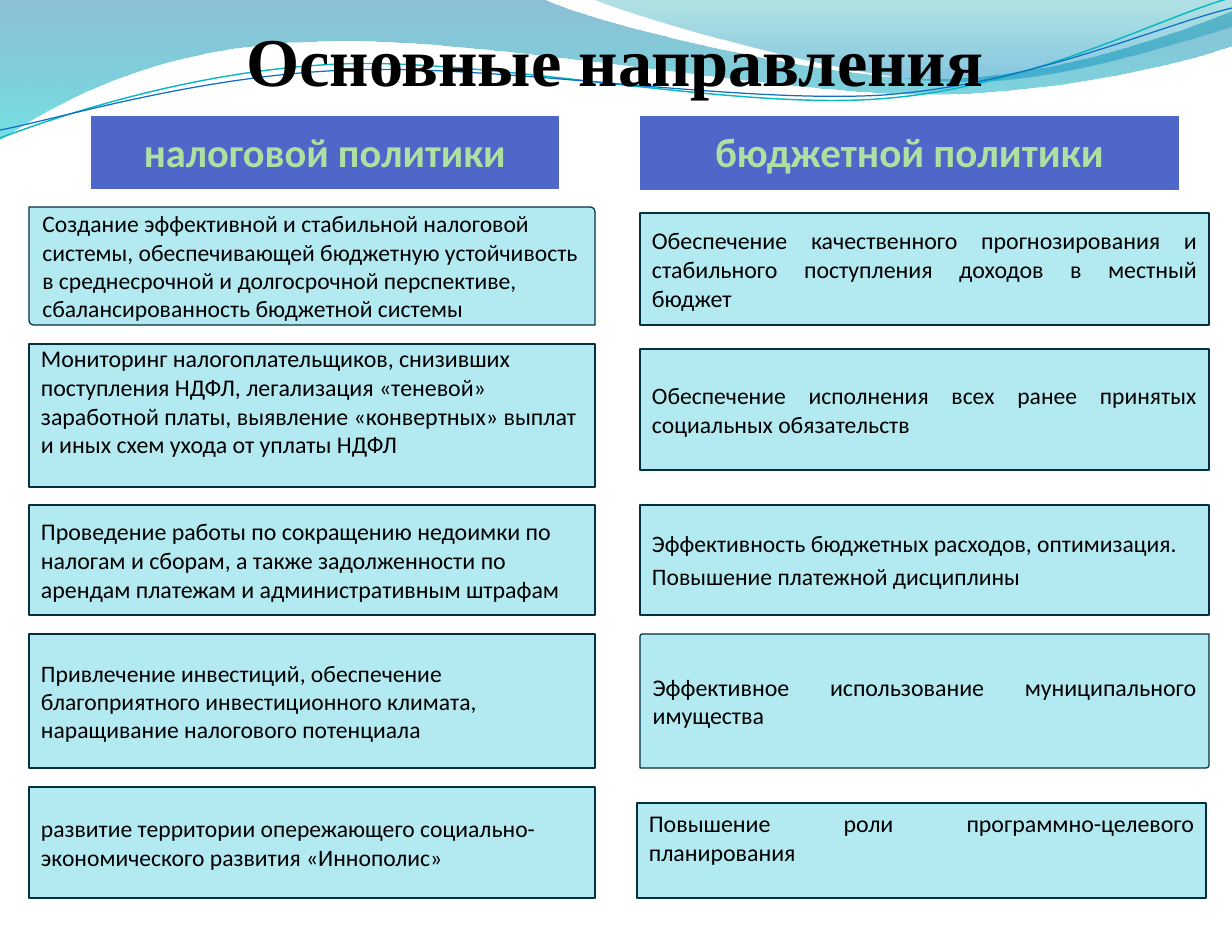
"""Slide on the main directions of tax and budget policy."""
from lxml.etree import SubElement
from pptx import Presentation
from pptx.dml.color import RGBColor
from pptx.enum.shapes import MSO_SHAPE
from pptx.enum.text import MSO_ANCHOR, PP_ALIGN
from pptx.oxml.ns import qn
from pptx.util import Pt

PX = 7538
COLORS = {
    "black": "000000", "card": "B3EAF2", "border": "02303E",
    "header": "4E67C8", "header_text": "B0DFA1",
    "deep": "0074A1", "aqua": "00C6CF", "teal": "00A1A9", "sky": "008BBF",
    "teal_line": "0AB8BF", "blue_line": "0F6FC6",
}


def rgb(name):
    return RGBColor.from_string(COLORS[name])


def write(shape, lines, size, align, color="black", font="Calibri", bold=False, **frame):
    tf = shape.text_frame
    settings = {"word_wrap": True, "vertical_anchor": MSO_ANCHOR.MIDDLE,
                "margin_left": 12 * PX, "margin_right": 12 * PX,
                "margin_top": 6 * PX, "margin_bottom": 6 * PX}
    for key, value in {**settings, **frame}.items():
        setattr(tf, key, value)
    for i, line in enumerate(lines):
        p = tf.paragraphs[0] if i == 0 else tf.add_paragraph()
        p.alignment = align
        p.space_before = Pt(round(size * 0.2, 1))
        r = p.add_run()
        r.text = line
        for key, value in {"size": Pt(size), "name": font, "bold": bold}.items():
            setattr(r.font, key, value)
        r.font.color.rgb = rgb(color)


prs = Presentation()
prs.slide_width, prs.slide_height = 1232 * PX, 936 * PX
s = prs.slides.add_slide(prs.slide_layouts[5])

waves = [
    ([[(0, 0)], [(542, -1)], [(586, 21), (818, 79), (934, 79)],
      [(1052, 79), (1181, 32), (1232, 11)], [(1234, 45)],
      [(1212, 55), (1072, 95), (919, 95)], [(767, 93), (471, 35), (317, 42)],
      [(159, 45), (57, 103), (-1, 141)]],
     [("deep", 45, 0), ("aqua", 55, 1)], None),
    ([[(591, -1)], [(628, 15), (841, 78), (947, 81)],
      [(1054, 86), (1185, 40), (1232, 27)], [(1232, 0)]],
     [("teal", 30, 0), ("sky", 45, 0.8)], None),
    ([[(0, 138)], [(59, 116), (194, 70), (341, 64)], [(488, 58), (730, 110), (878, 99)],
      [(1026, 89), (1156, 19), (1230, -2)]], None, ("teal_line", 0.85)),
    ([[(0, 130)], [(58, 119), (201, 75), (349, 70)], [(496, 64), (736, 104), (883, 95)],
      [(1031, 84), (1160, 25), (1232, 8)]], None, ("blue_line", 0.75)),
]
for (start, *segments), gradient, line in waves:
    builder = s.shapes.build_freeform(start[0][0] * PX, start[0][1] * PX)
    points = [(x * PX, y * PX) for seg in segments for x, y in seg]
    builder.add_line_segments(points, close=gradient is not None)
    sp = builder.convert_to_shape()
    steps = iter(list(sp.element.iter(qn("a:lnTo"))))
    for seg in segments:
        group = [next(steps) for _ in seg]
        if len(group) == 3:
            curve = SubElement(group[0].getparent(), qn("a:cubicBezTo"))
            group[0].addprevious(curve)
            for step in group:
                curve.append(step[0])
                step.getparent().remove(step)
    sp.shadow.inherit = False
    if gradient:
        sp.line.fill.background()
        sp.fill.gradient()
        sp.fill.gradient_angle = 270
        for stop, (color, _, position) in zip(sp.fill.gradient_stops, gradient):
            stop.color.rgb = rgb(color)
            stop.position = position
        for clr, (_, opacity, _) in zip(sp.element.spPr.iter(qn("a:srgbClr")), gradient):
            SubElement(clr, qn("a:alpha"), val=str(opacity * 1000))
    else:
        sp.fill.background()
        sp.line.color.rgb = rgb(line[0])
        sp.line.width = Pt(line[1])

title = s.shapes.title
title.left, title.top, title.width, title.height = 230 * PX, 12 * PX, 770 * PX, 95 * PX
write(title, ["Основные направления"], 40.6, PP_ALIGN.CENTER,
      font="Times New Roman", bold=True, word_wrap=False)
s.shapes._spTree.append(title.element)

raised = {"vertical_anchor": MSO_ANCHOR.TOP, "margin_top": 0}
top = {"vertical_anchor": MSO_ANCHOR.TOP}
budget = [
    (640, 213, 112, (0, 0), 14.2, {}, [
        "Обеспечение качественного прогнозирования и стабильного поступления доходов "
        "в местный бюджет"]),
    (640, 349, 121, (0, 0), 14, {}, [
        "Обеспечение исполнения всех ранее принятых социальных обязательств"]),
    (640, 505, 110, (0, 0), 14, {}, [
        "Эффективность бюджетных расходов, оптимизация.", "Повышение платежной дисциплины"]),
    (640, 634, 134, (0.02, 0), 14.2, {}, [
        "Эффективное использование муниципального имущества"]),
    (637, 803, 95, (0, 0), 14.2, top, [
        "Повышение роли программно-целевого планирования"]),
]
tax = [
    (29, 207, 118, (0, 0.04), 14, {}, [
        "Создание эффективной и стабильной налоговой системы, обеспечивающей бюджетную "
        "устойчивость в среднесрочной и долгосрочной перспективе, сбалансированность "
        "бюджетной системы"]),
    (29, 344, 143, (0, 0), 14.2, raised, [
        "Мониторинг налогоплательщиков, снизивших поступления НДФЛ, легализация «теневой» "
        "заработной платы, выявление «конвертных» выплат и иных схем ухода от уплаты НДФЛ"]),
    (29, 505, 110, (0, 0), 14.2, {}, [
        "Проведение работы по сокращению недоимки по налогам и сборам, а также "
        "задолженности по арендам платежам и административным штрафам"]),
    (29, 634, 134, (0, 0), 14, {}, [
        "Привлечение инвестиций, обеспечение благоприятного инвестиционного климата, "
        "наращивание налогового потенциала"]),
    (29, 787, 111, (0, 0), 14, {}, [
        "развитие территории опережающего социально-экономического развития «Иннополис»"]),
]
for cards, w, align in [(budget, 569, PP_ALIGN.JUSTIFY), (tax, 566, PP_ALIGN.LEFT)]:
    for x, y, h, corners, size, frame, lines in cards:
        sp = s.shapes.add_shape(MSO_SHAPE.ROUND_2_DIAG_RECTANGLE,
                                x * PX, y * PX, w * PX, h * PX)
        sp.adjustments[0], sp.adjustments[1] = corners
        sp.shadow.inherit = False
        sp.fill.solid()
        sp.fill.fore_color.rgb = rgb("card")
        sp.line.color.rgb = rgb("border")
        sp.line.width = Pt(0.75)
        write(sp, lines, size, align, **frame)

headers = [(91, 468, 73, 24, "налоговой политики"),
           (640, 539, 74, 24.4, "бюджетной политики")]
for x, w, h, size, text in headers:
    sp = s.shapes.add_shape(MSO_SHAPE.PARALLELOGRAM, x * PX, 116 * PX, w * PX, h * PX)
    sp.adjustments[0] = 0
    sp.shadow.inherit = False
    sp.fill.solid()
    sp.fill.fore_color.rgb = rgb("header")
    sp.line.fill.background()
    write(sp, [text], size, PP_ALIGN.CENTER, "header_text", bold=True, margin_top=3 * PX)

prs.save("out.pptx")
